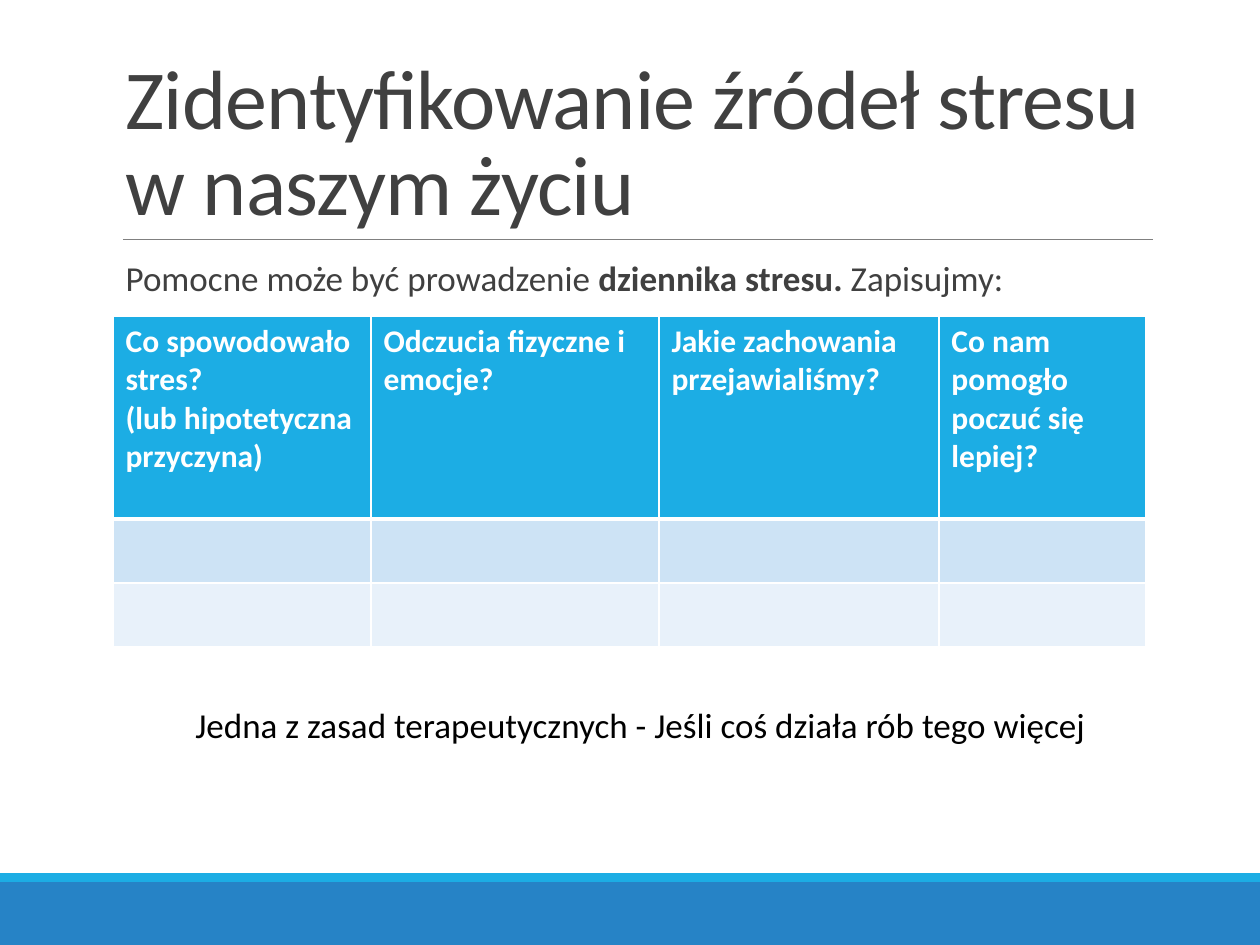
from lxml import etree
from pptx import Presentation
from pptx import util as u
from pptx.dml.color import RGBColor
from pptx.enum import shapes, text
from pptx.oxml import ns

SCALE = 914400 / 126
FONT = "Calibri"
WHITE, GREY, BLACK = "FFFFFF", "404040", "000000"
SKY, BLUE = "1CADE4", "2683C6"
HEADERS = [
    "Co spowodowało stres?\n(lub hipotetyczna przyczyna)",
    "Odczucia fizyczne i emocje?",
    "Jakie zachowania przejawialiśmy?",
    "Co nam pomogło poczuć się lepiej?",
]
COLUMNS = [258, 288, 280, 207]
ROWS = [(203, SKY), (64, "CDE3F5"), (64, "E8F1FA")]


def px(length):
    """Turn pixels into EMU."""
    return u.Emu(round(length * SCALE))


def colour(code):
    """Turn a hex string into a colour."""
    return RGBColor.from_string(code)


def add_xml(parent, tag, **attributes):
    """Append a drawing element to a parent."""
    return etree.SubElement(parent, ns.qn(tag), attributes)


def place(shape, left, top, width, height):
    """Move and size a shape."""
    shape.left, shape.top = px(left), px(top)
    shape.width, shape.height = px(width), px(height)


def style(span, size, code, bold=False):
    """Format one run."""
    span.font.name, span.font.size, span.font.bold = FONT, u.Pt(size), bold
    span.font.color.rgb = colour(code)


def add_footer(page, left, top, width, height):
    """Draw the two-tone band at the foot of the page."""
    strip = 9
    bands = [(top + strip, height - strip, BLUE), (top, strip, SKY)]
    for band_top, band_height, code in bands:
        band = page.shapes.add_shape(
            shapes.MSO_SHAPE.RECTANGLE, px(left), px(band_top), px(width), px(band_height))
        band.shadow.inherit = False
        band.fill.solid()
        band.fill.fore_color.rgb = colour(code)
        band.line.fill.background()


def add_title(page, left, top, width, height):
    """Fill the title and rule a line under it."""
    title = page.shapes.title
    place(title, left, top, width, height)
    frame = title.text_frame
    frame.text = "Zidentyfikowanie źródeł stresu w naszym życiu"
    frame.word_wrap = True
    frame.auto_size = text.MSO_AUTO_SIZE.NONE
    frame.vertical_anchor = text.MSO_ANCHOR.BOTTOM
    para = frame.paragraphs[0]
    para.alignment = text.PP_ALIGN.LEFT
    para.line_spacing = 0.85
    span = para.runs[0]
    style(span, 48, GREY)
    span.font._element.set("spc", "-50")
    bottom = px(top + height)
    rule = page.shapes.add_connector(
        shapes.MSO_CONNECTOR.STRAIGHT, px(left + 10), bottom, px(left + width), bottom)
    rule.line.color.rgb = colour("808080")
    rule.line.width = u.Pt(0.5)
    add_xml(rule._element.spPr, "a:effectLst")


def add_body(page, left, top, width, height):
    """Fill the body with the lead sentence."""
    body = page.placeholders[1]
    place(body, left, top, width, height)
    frame = body.text_frame
    frame.auto_size = text.MSO_AUTO_SIZE.NONE
    frame.margin_left = frame.margin_right = 0
    para = frame.paragraphs[0]
    indent = u.Inches(0.1)
    properties = para._p.get_or_add_pPr()
    properties.set("marL", str(indent))
    properties.set("indent", str(-indent))
    add_xml(add_xml(properties, "a:buClr"), "a:srgbClr", val=SKY)
    add_xml(properties, "a:buChar", char=" ")
    para.line_spacing = 0.9
    para.space_before, para.space_after = u.Pt(0), u.Pt(2)
    parts = [("Pomocne może być prowadzenie ", False),
             ("dziennika stresu.", True), (" Zapisujmy:", False)]
    for words, bold in parts:
        span = para.add_run()
        span.text = words
        style(span, 20, GREY, bold)


def add_borders(cell, bottom):
    """Give a cell white borders, with its own bottom width in points."""
    properties = cell._tc.get_or_add_tcPr()
    edges = [("a:lnL", 1), ("a:lnR", 1), ("a:lnT", 1), ("a:lnB", bottom)]
    for position, (tag, points) in enumerate(edges):
        edge = add_xml(properties, tag, w=str(u.Pt(points)))
        add_xml(add_xml(edge, "a:solidFill"), "a:srgbClr", val=WHITE)
        properties.insert(position, edge)


def add_diary(page, left, top):
    """Add the stress diary table."""
    heights = [height for height, _ in ROWS]
    table = page.shapes.add_table(
        len(ROWS), len(COLUMNS), px(left), px(top), px(sum(COLUMNS)), px(sum(heights))).table
    for column, width in zip(table.columns, COLUMNS):
        column.width = px(width)
    for index, (height, code) in enumerate(ROWS):
        table.rows[index].height = px(height)
        for cell in table.rows[index].cells:
            cell.fill.solid()
            cell.fill.fore_color.rgb = colour(code)
            add_borders(cell, 3 if index == 0 else 1)
    for cell, words in zip(table.rows[0].cells, HEADERS):
        cell.text_frame.text = words
        for para in cell.text_frame.paragraphs:
            style(para.runs[0], 18, WHITE, True)


def add_advice(page, left, top, width, height):
    """Add the closing advice."""
    frame = page.shapes.add_textbox(px(left), px(top), px(width), px(height)).text_frame
    frame.word_wrap = True
    frame.text = "Jedna z zasad terapeutycznych - Jeśli coś działa rób tego więcej"
    style(frame.paragraphs[0].runs[0], 20, BLACK)


def main():
    """Build the slide and save it."""
    deck = Presentation()
    deck.slide_width, deck.slide_height = px(1260), px(945)
    page = deck.slides.add_slide(deck.slide_layouts[1])
    add_footer(page, 0, 873, 1260, 72)
    add_title(page, 113, 39, 1040, 200)
    add_body(page, 113, 255, 1040, 554)
    add_diary(page, 113, 316)
    add_advice(page, 183, 697, 920, 55)
    deck.save("out.pptx")


if __name__ == "__main__":
    main()
